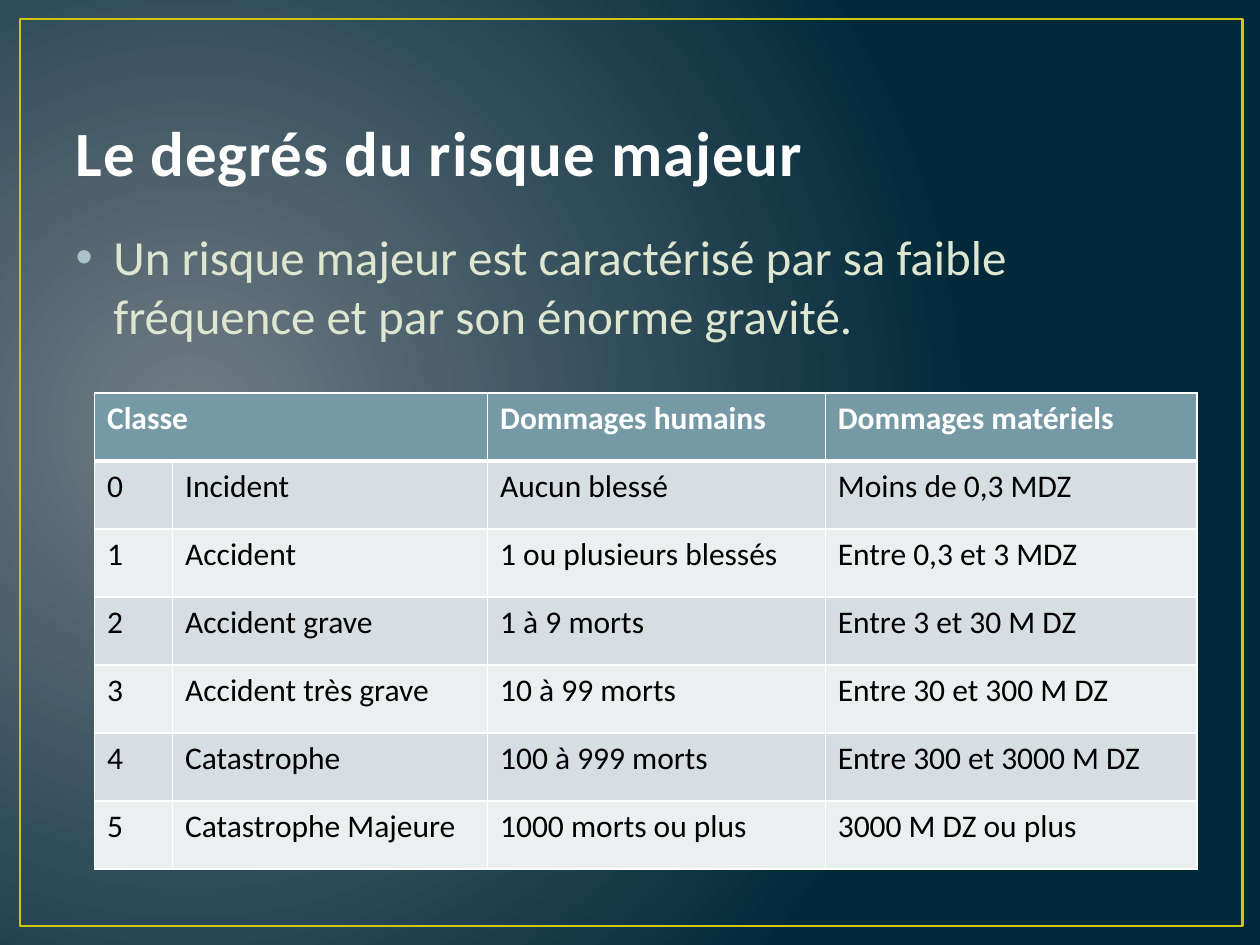
import pptx
import pptx.util
import pptx.dml.color
import pptx.enum.shapes
import pptx.enum.text
import pptx.oxml
import pptx.oxml.ns
from lxml import etree

Inches, Pt = pptx.util.Inches, pptx.util.Pt
qn = pptx.oxml.ns.qn

COLORS = {
    "glow": "717C84", "night": "01293A", "frame": "CFC60D",
    "title": "FEFEFE", "body": "DFE6D0", "bullet": "ACC2C9",
    "header": "759AA5", "odd": "D6DEE1", "even": "ECEFF0",
    "white": "FFFFFF", "black": "000000",
}
ROWS = [
    ["Classe", "", "Dommages humains", "Dommages matériels"],
    ["0", "Incident", "Aucun blessé", "Moins de 0,3 MDZ"],
    ["1", "Accident", "1 ou plusieurs blessés", "Entre 0,3 et 3 MDZ"],
    ["2", "Accident grave", "1 à 9 morts", "Entre 3 et 30 M DZ"],
    ["3", "Accident très grave", "10 à 99 morts", "Entre 30 et 300 M DZ"],
    ["4", "Catastrophe", "100 à 999 morts", "Entre 300 et 3000 M DZ"],
    ["5", "Catastrophe Majeure", "1000 morts ou plus", "3000 M DZ ou plus"],
]
COL_WIDTHS = [0.62, 2.5, 2.68, 2.95]
ROW_HEIGHT = 0.54


def rgb(name):
    return pptx.dml.color.RGBColor.from_string(COLORS[name])


class SlideBuilder:
    font = "Calibri"

    def __init__(self, prs):
        self.s = prs.slides.add_slide(prs.slide_layouts[1])

    def style(self, p, size, color, bold=False):
        for r in p.runs:
            r.font.name, r.font.size, r.font.bold = self.font, Pt(size), bold
            r.font.color.rgb = rgb(color)

    def place(self, sp, x, y, w, h):
        sp.left, sp.top, sp.width, sp.height = map(Inches, (x, y, w, h))

    def background(self, inner, outer):
        fill = self.s.background.fill
        fill.gradient()
        for stop, color in zip(fill.gradient_stops, (inner, outer)):
            stop.color.rgb = rgb(color)
        grad = self.s.element.find(".//" + qn("a:gradFill"))
        grad.remove(grad.find(qn("a:lin")))
        circle = etree.SubElement(grad, qn("a:path"), path="circle")
        etree.SubElement(circle, qn("a:fillToRect"),
                         l="15000", t="50000", r="85000", b="60000")

    def frame(self, x, y, w, h):
        sp = self.s.shapes.add_shape(pptx.enum.shapes.MSO_SHAPE.RECTANGLE,
                                     *map(Inches, (x, y, w, h)))
        sp.shadow.inherit = False
        sp.fill.background()
        sp.line.color.rgb = rgb("frame")
        sp.line.width = Pt(1.5)
        self.s.shapes.element.insert(2, sp.element)  # send to back

    def title(self, text, *box):
        sp = self.s.shapes.title
        self.place(sp, *box)
        tf = sp.text_frame
        tf.text = text
        tf.vertical_anchor = pptx.enum.text.MSO_ANCHOR.BOTTOM
        p = tf.paragraphs[0]
        p.alignment = pptx.enum.text.PP_ALIGN.LEFT
        self.style(p, 36, "title", bold=True)
        p.runs[0].font._element.set("spc", "50")

    def bullet(self, text, *box):
        sp = self.s.placeholders[1]
        self.place(sp, *box)
        sp.text_frame.text = text
        p = sp.text_frame.paragraphs[0]
        p.space_before = Pt(0)
        pPr = p._p.get_or_add_pPr()
        pPr.set("marL", str(Inches(0.3)))
        pPr.set("indent", str(-Inches(0.3)))
        bu_color = etree.SubElement(pPr, qn("a:buClr"))
        etree.SubElement(bu_color, qn("a:srgbClr"), val=COLORS["bullet"])
        etree.SubElement(pPr, qn("a:buFont"), typeface="Arial")
        etree.SubElement(pPr, qn("a:buChar"), char="•")
        self.style(p, 28, "body")

    def borders(self, cell, **widths):
        tcPr = cell._tc.get_or_add_tcPr()
        for side in "LRTB":
            ln = etree.SubElement(tcPr, qn("a:ln" + side),
                                  w=str(Pt(widths.get(side, 1))))
            fill = etree.SubElement(ln, qn("a:solidFill"))
            etree.SubElement(fill, qn("a:srgbClr"), val=COLORS["white"])

    def table(self, rows, x, y):
        table = self.s.shapes.add_table(
            len(rows), len(COL_WIDTHS), Inches(x), Inches(y),
            Inches(sum(COL_WIDTHS)), Inches(ROW_HEIGHT * len(rows))).table
        for col, width in zip(table.columns, COL_WIDTHS):
            col.width = Inches(width)
        for i, row in enumerate(rows):
            table.rows[i].height = Inches(ROW_HEIGHT)
            head = i == 0
            # Thick rule between the header and the first row
            thick = {0: {"B": 3}, 1: {"T": 3}}.get(i, {})
            for j, text in enumerate(row):
                cell = table.cell(i, j)
                cell.text = text
                self.borders(cell, **thick)
                cell.fill.solid()
                cell.fill.fore_color.rgb = rgb(
                    "header" if head else "odd" if i % 2 else "even")
                self.style(cell.text_frame.paragraphs[0], 18,
                           "white" if head else "black", bold=head)
        table.cell(0, 0).merge(table.cell(0, 1))


def main():
    prs = pptx.Presentation()
    prs.slide_width, prs.slide_height = Inches(10), Inches(7.5)
    b = SlideBuilder(prs)
    # Backdrop
    b.background("glow", "night")
    b.frame(0.16, 0.15, 9.7, 7.2)
    # Title and statement
    b.title("Le degrés du risque majeur", 0.5, 0.3, 9, 1.25)
    b.bullet("Un risque majeur est caractérisé par sa faible fréquence "
             "et par son énorme gravité.", 0.5, 1.75, 9, 1.29)
    # Severity scale
    b.table(ROWS, 0.75, 3.12)
    prs.save("out.pptx")


if __name__ == "__main__":
    main()
